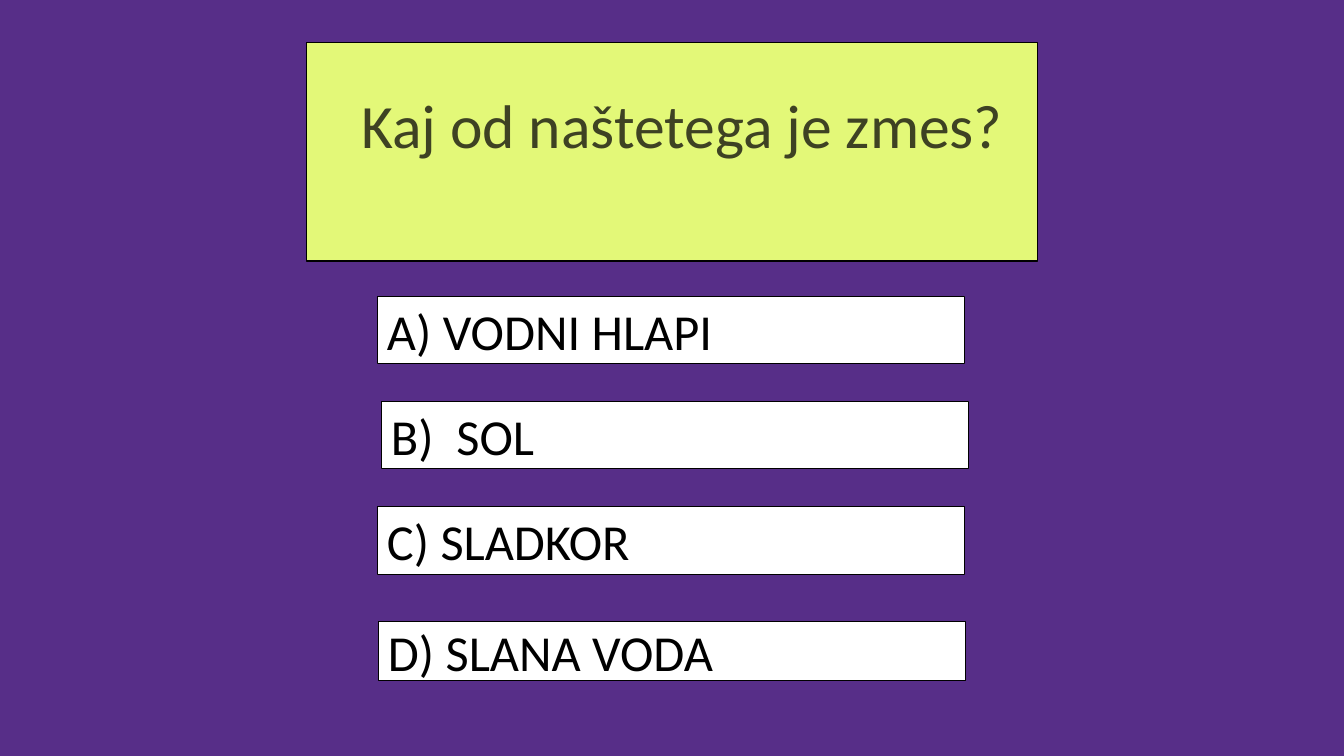
import pptx
import pptx.util
import pptx.dml.color
import pptx.enum.shapes
import pptx.enum.text
from dataclasses import dataclass

Inches = pptx.util.Inches
Pt = pptx.util.Pt
Shape = pptx.enum.shapes.MSO_SHAPE
Align = pptx.enum.text.PP_ALIGN
Anchor = pptx.enum.text.MSO_ANCHOR


@dataclass(frozen=True)
class Theme:
    font: str = "Calibri"
    back: str = "572E88"
    lime: str = "E3F878"
    olive: str = "3E4223"
    white: str = "FFFFFF"
    black: str = "000000"
    ask_size: int = 44
    pick_size: int = 36
    edge: float = 0.75


class Quiz:
    def __init__(self, deck, theme):
        self.theme = theme
        self.slide = deck.slides.add_slide(deck.slide_layouts[6])
        self.paint(self.slide.background.fill, theme.back)

    def paint(self, fill, color):
        fill.solid()
        fill.fore_color.rgb = pptx.dml.color.RGBColor.from_string(color)

    def panel(self, kind, box, fill, anchor):
        shape = self.slide.shapes.add_shape(kind, *map(Inches, box))
        shape.shadow.inherit = False
        self.paint(shape.fill, fill)
        self.paint(shape.line.fill, self.theme.black)
        shape.line.width = Pt(self.theme.edge)
        frame = shape.text_frame
        frame.word_wrap = True
        frame.vertical_anchor = anchor
        return frame

    def label(self, frame, text, size, color, align):
        line = frame.paragraphs[0]
        line.alignment = align
        run = line.add_run()
        run.text = text
        run.font.name = self.theme.font
        run.font.size = Pt(size)
        self.paint(run.font.fill, color)
        return line

    def ask(self, text, box):
        frame = self.panel(Shape.RECTANGLE, box, self.theme.lime, Anchor.TOP)
        frame.margin_left = Inches(0.3)
        frame.margin_top = Inches(0.08)
        line = self.label(frame, text, self.theme.ask_size,
                          self.theme.olive, Align.CENTER)
        line.line_spacing = 1.5

    def pick(self, text, box):
        frame = self.panel(Shape.ACTION_BUTTON_CUSTOM, box,
                           self.theme.white, Anchor.MIDDLE)
        frame.margin_top = frame.margin_bottom = 0
        self.label(frame, text, self.theme.pick_size,
                   self.theme.black, Align.LEFT)


def main():
    deck = pptx.Presentation()
    deck.slide_width = Inches(13.33)
    deck.slide_height = Inches(7.5)
    quiz = Quiz(deck, Theme())
    quiz.ask("Kaj od naštetega je zmes?", (3.04, 0.42, 7.25, 2.17))
    picks = [
        ("A) VODNI HLAPI", 3.74, 2.94, 0.67),
        ("B)  SOL", 3.78, 3.98, 0.67),
        ("C) SLADKOR", 3.74, 5.03, 0.67),
        ("D) SLANA VODA", 3.75, 6.17, 0.58),
    ]
    for text, left, top, height in picks:
        quiz.pick(text, (left, top, 5.83, height))
    deck.save("out.pptx")


if __name__ == "__main__":
    main()
